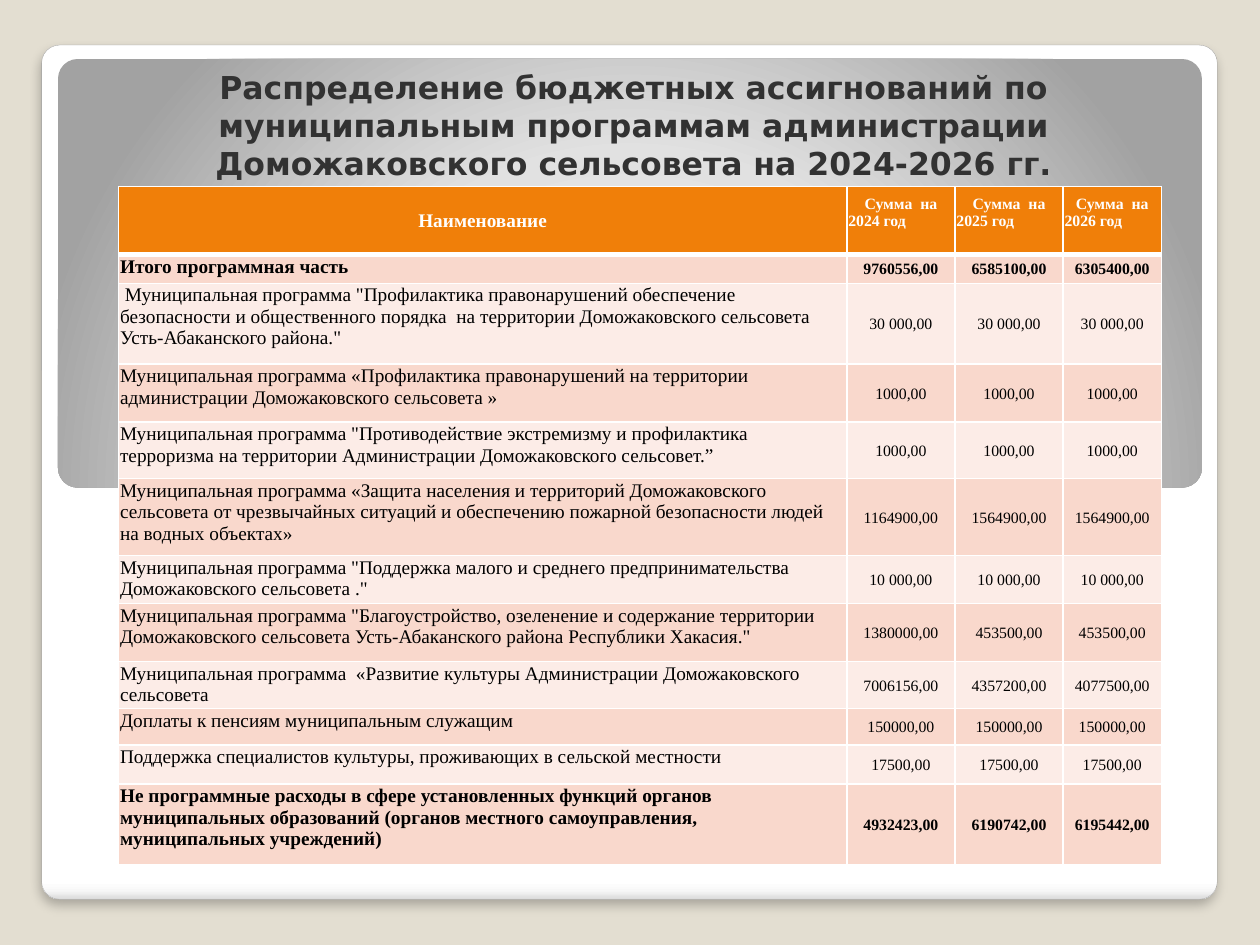
from dataclasses import dataclass

from lxml.etree import SubElement
from pptx import Presentation
from pptx.dml.color import RGBColor
from pptx.enum.shapes import MSO_SHAPE
from pptx.enum.text import MSO_ANCHOR, MSO_AUTO_SIZE, PP_ALIGN
from pptx.oxml import parse_xml
from pptx.oxml.ns import nsdecls, qn
from pptx.util import Cm, Pt

TABLE_FONT = "Times New Roman"
HEADER_FILL = "F07F09"
BAND_FILLS = ("F9D8CC", "FCECE7")
COLUMN_WIDTHS = (14.68, 2.18, 2.18, 1.98)
HEADER_HEIGHT = 1.37
YEARS = (2024, 2025, 2026)


@dataclass
class Panel:
    left: float
    top: float
    width: float
    height: float
    rounding: float
    stops: tuple[tuple[int, str], ...]
    direction: str


@dataclass
class BudgetRow:
    name: str
    amounts: tuple[str, str, str]
    height: float
    bold: bool = False


PANELS = (
    Panel(0.84, 0.91, 23.7, 17.22, 0.021,
          ((0, "FFFFFF"), (98, "FFFFFF"), (99, "F7F7F7"), (100, "DADADA")),
          '<a:lin ang="5400000" scaled="0"/>'),
    Panel(1.17, 1.19, 23.06, 8.64, 0.046,
          ((0, "FFFFFF"), (55, "E1E1E1"), (100, "A2A2A2")),
          '<a:path path="circle"><a:fillToRect l="50000" t="175000" r="50000" b="-75000"/></a:path>'),
)

BUDGET_ROWS = (
    BudgetRow("Итого программная часть", ("9760556,00", "6585100,00", "6305400,00"), 0.58, True),
    BudgetRow(" Муниципальная программа \"Профилактика правонарушений обеспечение безопасности "
              "и общественного порядка  на территории Доможаковского сельсовета "
              "Усть-Абаканского района.\"", ("30 000,00",) * 3, 1.63),
    BudgetRow("Муниципальная программа «Профилактика правонарушений на территории "
              "администрации Доможаковского сельсовета »", ("1000,00",) * 3, 1.17),
    BudgetRow("Муниципальная программа \"Противодействие экстремизму и профилактика терроризма "
              "на территории Администрации Доможаковского сельсовет.”", ("1000,00",) * 3, 1.14),
    BudgetRow("Муниципальная программа «Защита населения и территорий Доможаковского сельсовета "
              "от чрезвычайных ситуаций и обеспечению пожарной безопасности людей на водных объектах»",
              ("1164900,00", "1564900,00", "1564900,00"), 1.55),
    BudgetRow("Муниципальная программа \"Поддержка малого и среднего предпринимательства "
              "Доможаковского сельсовета .\"", ("10 000,00",) * 3, 0.97),
    BudgetRow("Муниципальная программа \"Благоустройство, озеленение и содержание территории "
              "Доможаковского сельсовета Усть-Абаканского района Республики Хакасия.\"",
              ("1380000,00", "453500,00", "453500,00"), 1.17),
    BudgetRow("Муниципальная программа  «Развитие культуры Администрации Доможаковского сельсовета",
              ("7006156,00", "4357200,00", "4077500,00"), 0.94),
    BudgetRow("Доплаты к пенсиям муниципальным служащим", ("150000,00",) * 3, 0.74),
    BudgetRow("Поддержка специалистов культуры, проживающих в сельской местности",
              ("17500,00",) * 3, 0.79),
    BudgetRow("Не программные расходы в сфере установленных функций органов муниципальных "
              "образований (органов местного самоуправления, муниципальных учреждений)",
              ("4932423,00", "6190742,00", "6195442,00"), 1.63, True),
)


def color(value: str) -> RGBColor:
    return RGBColor.from_string(value)


def format_paragraph(paragraph, size: float, font_color: str, bold: bool,
                     alignment=PP_ALIGN.CENTER, font_name: str = TABLE_FONT) -> None:
    paragraph.alignment = alignment
    paragraph.font.name = font_name
    paragraph.font.size = Pt(size)
    paragraph.font.bold = bold
    paragraph.font.color.rgb = color(font_color)


def draw_panel(slide, panel: Panel):
    shape = slide.shapes.add_shape(MSO_SHAPE.ROUNDED_RECTANGLE, Cm(panel.left), Cm(panel.top),
                                   Cm(panel.width), Cm(panel.height))
    shape.adjustments[0] = panel.rounding
    shape.shadow.inherit = False
    shape.line.fill.background()
    stops = "".join(f'<a:gs pos="{position * 1000}"><a:srgbClr val="{value}"/></a:gs>'
                    for position, value in panel.stops)
    gradient = parse_xml(f'<a:gradFill {nsdecls("a")} rotWithShape="1">'
                         f'<a:gsLst>{stops}</a:gsLst>{panel.direction}</a:gradFill>')
    shape.element.spPr.find(qn("a:prstGeom")).addnext(gradient)
    slide.shapes.title.element.addprevious(shape.element)
    return shape


def add_soft_shadow(shape) -> None:
    effects = shape.element.spPr.find(qn("a:effectLst"))
    shadow = SubElement(effects, qn("a:outerShdw"), blurRad=str(Pt(6)), dist=str(Pt(4)),
                        dir="5400000", algn="tl", rotWithShape="0")
    shade = SubElement(shadow, qn("a:srgbClr"), val="000000")
    SubElement(shade, qn("a:alpha"), val="25000")


def format_cell(cell, fill: str, anchor, top_border: float = 1, bottom_border: float = 1) -> None:
    cell.margin_left = cell.margin_right = cell.margin_top = Cm(0.03)
    cell.margin_bottom = 0
    cell.vertical_anchor = anchor
    properties = cell._tc.get_or_add_tcPr()
    for side, width in (("L", 1), ("R", 1), ("T", top_border), ("B", bottom_border)):
        border = SubElement(properties, qn(f"a:ln{side}"), w=str(Pt(width)))
        border_fill = SubElement(border, qn("a:solidFill"))
        SubElement(border_fill, qn("a:srgbClr"), val="FFFFFF")
    cell.fill.solid()
    cell.fill.fore_color.rgb = color(fill)


def fill_header(table) -> None:
    name_cell, *year_cells = table.rows[0].cells
    format_cell(name_cell, HEADER_FILL, MSO_ANCHOR.MIDDLE, bottom_border=3)
    name_cell.text = "Наименование"
    format_paragraph(name_cell.text_frame.paragraphs[0], 11, "FFFFFF", True)
    for cell, year in zip(year_cells, YEARS):
        format_cell(cell, HEADER_FILL, MSO_ANCHOR.TOP, bottom_border=3)
        cell.margin_top = Cm(0.17)
        cell.text = f"Сумма  на\n{year} год"
        for paragraph, alignment in zip(cell.text_frame.paragraphs, (PP_ALIGN.CENTER, PP_ALIGN.LEFT)):
            format_paragraph(paragraph, 9, "FFFFFF", True, alignment)


def fill_row(table, index: int, row: BudgetRow) -> None:
    table.rows[index].height = Cm(row.height)
    for column, text in enumerate((row.name, *row.amounts)):
        is_name = column == 0
        cell = table.cell(index, column)
        format_cell(cell, BAND_FILLS[(index - 1) % 2], MSO_ANCHOR.TOP if is_name else MSO_ANCHOR.MIDDLE,
                    top_border=3 if index == 1 else 1)
        cell.text = text
        format_paragraph(cell.text_frame.paragraphs[0], 11 if is_name else 9, "000000", row.bold,
                         PP_ALIGN.LEFT if is_name else PP_ALIGN.CENTER)


def draw_table(slide) -> None:
    height = HEADER_HEIGHT + sum(row.height for row in BUDGET_ROWS)
    table = slide.shapes.add_table(len(BUDGET_ROWS) + 1, len(COLUMN_WIDTHS), Cm(2.39), Cm(3.76),
                                   Cm(sum(COLUMN_WIDTHS)), Cm(height)).table
    table.horz_banding = False
    for column, width in zip(table.columns, COLUMN_WIDTHS):
        column.width = Cm(width)
    table.rows[0].height = Cm(HEADER_HEIGHT)
    fill_header(table)
    for index, row in enumerate(BUDGET_ROWS, start=1):
        fill_row(table, index, row)


def format_title(title) -> None:
    title.left, title.top, title.width, title.height = Cm(1.98), Cm(1.4), Cm(21.59), Cm(2.39)
    frame = title.text_frame
    frame.text = ("Распределение бюджетных ассигнований по муниципальным программам "
                  "администрации Доможаковского сельсовета на 2024-2026 гг.")
    frame.word_wrap = True
    frame.auto_size = MSO_AUTO_SIZE.NONE
    frame.vertical_anchor = MSO_ANCHOR.BOTTOM
    frame.margin_left = frame.margin_right = frame.margin_top = frame.margin_bottom = Cm(0.13)
    format_paragraph(frame.paragraphs[0], 18, "323232", True, font_name="DejaVu Sans")


def main() -> None:
    presentation = Presentation()
    presentation.slide_width = Cm(25.4)
    presentation.slide_height = Cm(19.05)
    slide = presentation.slides.add_slide(presentation.slide_layouts[5])
    slide.background.fill.solid()
    slide.background.fill.fore_color.rgb = color("E3DED1")
    frame_panel, _ = [draw_panel(slide, panel) for panel in PANELS]
    frame_panel.line.color.rgb = color("A4A4A4")
    frame_panel.line.width = Pt(0.16)
    add_soft_shadow(frame_panel)
    format_title(slide.shapes.title)
    draw_table(slide)
    presentation.save("out.pptx")


if __name__ == "__main__":
    main()
